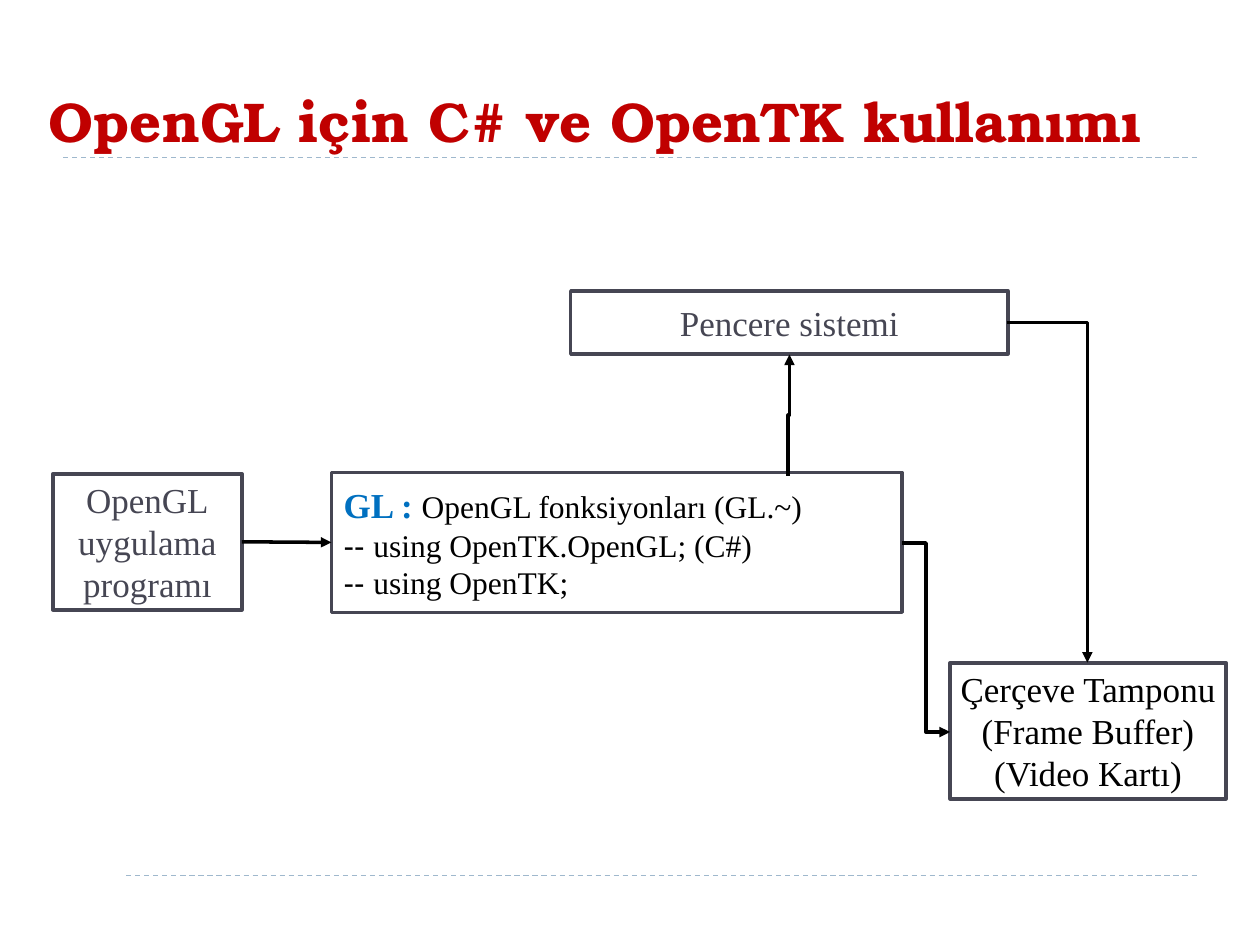
from lxml.etree import SubElement
from pptx import Presentation
from pptx.dml.color import RGBColor
from pptx.enum.dml import MSO_LINE
from pptx.enum.shapes import MSO_CONNECTOR, MSO_SHAPE
from pptx.enum.text import MSO_ANCHOR, PP_ALIGN
from pptx.oxml.ns import qn
from pptx.util import Inches, Pt

BODY_FONT = "Times New Roman"
SLATE, BLACK, RULE = "464653", "000000", "9FB8CD"


def color(value):
    return RGBColor.from_string(value)


def add_span(para, text, size=20, font=BODY_FONT, fill=BLACK, bold=False):
    span = para.add_run()
    span.text = text
    span.font.size = Pt(size)
    span.font.name = font
    span.font.bold = bold
    span.font.color.rgb = color(fill)


def set_frame(frame, wrap):
    frame.word_wrap = wrap
    frame.vertical_anchor = MSO_ANCHOR.MIDDLE


def add_title(page, text):
    box = page.shapes.add_textbox(Inches(0.29), Inches(0.33), Inches(9.38), Inches(1.25))
    set_frame(box.text_frame, wrap=True)
    add_span(box.text_frame.paragraphs[0], text, size=32, font="TeX Gyre Bonum",
             fill="C00000", bold=True)


def add_rectangle(page, left, top, width, height, fill=None, outline=None):
    shape = page.shapes.add_shape(MSO_SHAPE.RECTANGLE, Inches(left), Inches(top),
                                  Inches(width), Inches(height))
    shape.shadow.inherit = False
    if fill:
        shape.fill.solid()
        shape.fill.fore_color.rgb = color(fill)
    else:
        shape.fill.background()
    if outline:
        shape.line.color.rgb = color(outline)
        shape.line.width = Pt(2)
    else:
        shape.line.fill.background()
    return shape


def add_block(page, left, top, width, height, lines, align=PP_ALIGN.CENTER):
    """Outlined block; each line is a list of (text, format) spans."""
    block = add_rectangle(page, left, top, width, height, outline=SLATE)
    frame = block.text_frame
    set_frame(frame, wrap=align == PP_ALIGN.LEFT)
    for index, spans in enumerate(lines):
        para = frame.add_paragraph() if index else frame.paragraphs[0]
        para.alignment = align
        for text, style in spans:
            add_span(para, text, **style)
    return block


def plain_lines(*texts, fill):
    return [[(text, {"fill": fill})] for text in texts]


def add_line(page, start, end, kind=MSO_CONNECTOR.STRAIGHT, fill=BLACK, width=2):
    line = page.shapes.add_connector(kind, *map(Inches, start + end))
    line.line.color.rgb = color(fill)
    line.line.width = Pt(width)
    SubElement(line.element.spPr, qn("a:effectLst"))
    return line


def add_rule(page, y):
    rule = add_line(page, (0.5, y), (9.5, y), fill=RULE, width=0.75)
    rule.line.dash_style = MSO_LINE.DASH


def add_arrow(page, start, end, kind=MSO_CONNECTOR.ELBOW):
    arrow = add_line(page, start, end, kind)
    SubElement(arrow.line._get_or_add_ln(), qn("a:tailEnd"), type="triangle")
    return arrow


def main():
    deck = Presentation()
    deck.slide_width, deck.slide_height = Inches(10), Inches(7.5)
    page = deck.slides.add_slide(deck.slide_layouts[6])

    # Rules, corner patch and title
    add_rule(page, 6.95)
    add_rule(page, 1.25)
    add_rectangle(page, 0.35, 6.82, 0.63, 0.63, fill="FFFFFF")
    add_title(page, "OpenGL için C# ve OpenTK kullanımı")

    # Blocks
    code = {"size": 18}
    dashes = ("-- ", {"size": 18, "font": "Arial"})
    library = add_block(page, 2.63, 3.75, 4.53, 1.11, [
        [("GL : ", {"fill": "0070C0", "bold": True}),
         ("OpenGL fonksiyonları (GL.~)", code)],
        [dashes, ("using OpenTK.OpenGL; (C#)", code)],
        [dashes, ("using OpenTK;", code)],
    ], align=PP_ALIGN.LEFT)
    add_block(page, 4.53, 2.31, 3.47, 0.5, plain_lines("Pencere sistemi", fill=SLATE))
    add_block(page, 7.54, 5.26, 2.19, 1.08,
              plain_lines("Çerçeve Tamponu", "(Frame Buffer)", "(Video Kartı)", fill=BLACK))
    program = add_block(page, 0.42, 3.76, 1.5, 1.08,
                        plain_lines("OpenGL", "uygulama", "programı", fill=SLATE))

    # Program to library
    call = add_arrow(page, (1.92, 4.31), (2.63, 4.31), MSO_CONNECTOR.STRAIGHT)
    call.begin_connect(program, 3)
    call.end_connect(library, 1)

    # Library to frame buffer
    add_arrow(page, (7.16, 4.31), (7.54, 5.81))

    # Window system to frame buffer, with a single bend
    corner = add_arrow(page, (7.99, 2.56), (8.63, 5.26))
    corner.element.spPr.find(qn("a:prstGeom")).set("prst", "bentConnector2")

    # Library up to window system: a level elbow turned a quarter
    upward = add_arrow(page, (6.74, 3.3), (5.78, 3.29))
    upward.element.spPr.find(qn("a:xfrm")).set("rot", "5400000")

    deck.save("out.pptx")


if __name__ == "__main__":
    main()
